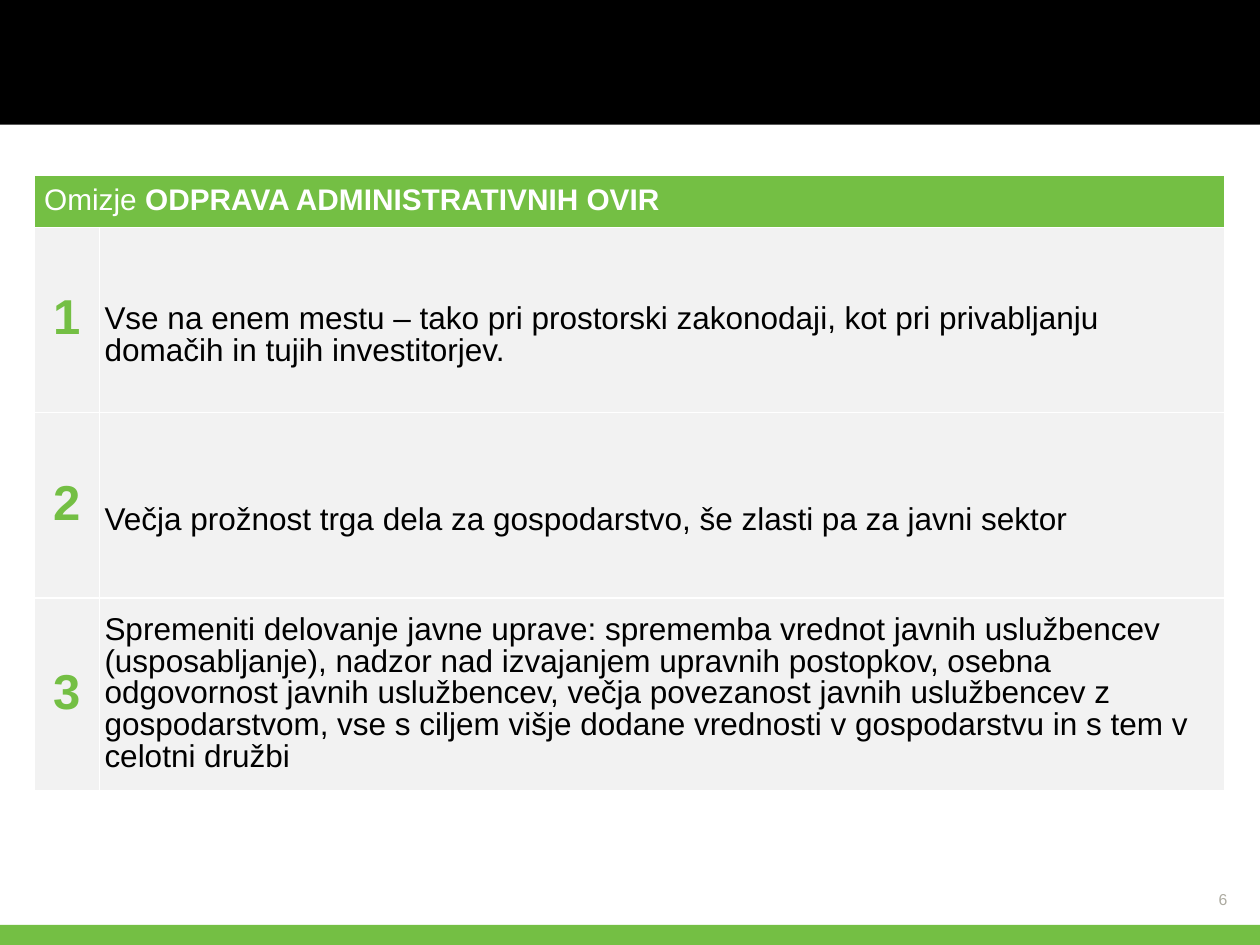
import pptx
import pptx.dml.color
import pptx.enum.shapes
import pptx.enum.text
import pptx.oxml
import pptx.oxml.ns
import pptx.util
from dataclasses import dataclass

Inches = pptx.util.Inches
Pt = pptx.util.Pt
ALIGN = pptx.enum.text.PP_ALIGN
ANCHOR = pptx.enum.text.MSO_ANCHOR


@dataclass(frozen=True)
class Theme:
    font: str = "Arial"
    green: str = "74BF44"
    black: str = "000000"
    white: str = "FFFFFF"
    panel: str = "F2F2F2"
    muted: str = "ADABA1"
    heading_size: int = 17
    number_size: int = 28
    body_size: int = 18
    page_size: int = 9


THEME = Theme()
TOPIC = ("Omizje ", "ODPRAVA ADMINISTRATIVNIH OVIR")
LINE_DROP = 0.25
PROPOSALS = [
    ("Vse na enem mestu – tako pri prostorski zakonodaji, kot pri privabljanju "
     "domačih in tujih investitorjev.", LINE_DROP),
    ("Večja prožnost trga dela za gospodarstvo, še zlasti pa za javni sektor", LINE_DROP),
    ("Spremeniti delovanje javne uprave: sprememba vrednot javnih uslužbencev "
     "(usposabljanje), nadzor nad izvajanjem upravnih postopkov, osebna odgovornost "
     "javnih uslužbencev, večja povezanost javnih uslužbencev z gospodarstvom, vse s "
     "ciljem višje dodane vrednosti v gospodarstvu in s tem v celotni družbi", 0),
]
COLUMN_WIDTHS = [0.52, 8.93]
ROW_HEIGHTS = [0.41, 1.47, 1.47, 1.53]


def rgb(colour):
    return pptx.dml.color.RGBColor.from_string(colour)


def apply_format(target, values):
    for name, value in values.items():
        setattr(target, name, value)


def set_margins(target, margin, top_extra=0):
    apply_format(target, {
        "margin_left": Inches(margin), "margin_right": Inches(margin),
        "margin_top": Inches(margin + top_extra), "margin_bottom": Inches(margin),
    })


def add_run(paragraph, text, size, colour, bold=False):
    run = paragraph.add_run()
    run.text = text
    apply_format(run.font, {"name": THEME.font, "size": Pt(size), "bold": bold})
    run.font.color.rgb = rgb(colour)


def add_band(slide, top, height, colour):
    band = slide.shapes.add_shape(
        pptx.enum.shapes.MSO_SHAPE.RECTANGLE, 0, Inches(top), Inches(10), Inches(height))
    band.shadow.inherit = False
    band.fill.solid()
    band.fill.fore_color.rgb = rgb(colour)
    band.line.fill.background()


def add_page_number(slide, number):
    page = slide.shapes.add_textbox(Inches(9.45), Inches(7.07), Inches(0.29), Inches(0.14))
    frame = page.text_frame
    set_margins(frame, 0)
    apply_format(frame, {"word_wrap": True, "vertical_anchor": ANCHOR.BOTTOM})
    paragraph = frame.paragraphs[0]
    paragraph.alignment = ALIGN.RIGHT
    add_run(paragraph, number, THEME.page_size, THEME.muted)


def add_borders(cell):
    properties = cell._tc.get_or_add_tcPr()
    for side in ("lnL", "lnR", "lnT", "lnB"):
        properties.append(pptx.oxml.parse_xml(
            f'<a:{side} {pptx.oxml.ns.nsdecls("a")} w="{Pt(1)}"><a:solidFill>'
            f'<a:srgbClr val="{THEME.white}"/></a:solidFill></a:{side}>'))


def format_cell(cell, fill, margin, alignment=ALIGN.LEFT, top_extra=0):
    add_borders(cell)
    cell.fill.solid()
    cell.fill.fore_color.rgb = rgb(fill)
    cell.vertical_anchor = ANCHOR.MIDDLE
    set_margins(cell, margin, top_extra)
    paragraph = cell.text_frame.paragraphs[0]
    apply_format(paragraph, {"alignment": alignment, "line_spacing": 0.9})
    return paragraph


def add_proposals(slide):
    table = slide.shapes.add_table(
        len(ROW_HEIGHTS), len(COLUMN_WIDTHS), Inches(0.27), Inches(1.39),
        Inches(sum(COLUMN_WIDTHS)), Inches(sum(ROW_HEIGHTS))).table
    apply_format(table, {"first_row": False, "horz_banding": False})
    for column, width in zip(table.columns, COLUMN_WIDTHS):
        column.width = Inches(width)
    for row, height in zip(table.rows, ROW_HEIGHTS):
        row.height = Inches(height)

    table.cell(0, 0).merge(table.cell(0, 1))
    heading = format_cell(table.cell(0, 0), THEME.green, 0.08)
    for text, bold in zip(TOPIC, (False, True)):
        add_run(heading, text, THEME.heading_size, THEME.white, bold)

    for index, (proposal, drop) in enumerate(PROPOSALS, start=1):
        number = format_cell(table.cell(index, 0), THEME.panel, 0.04, ALIGN.CENTER)
        add_run(number, str(index), THEME.number_size, THEME.green, True)
        body = format_cell(table.cell(index, 1), THEME.panel, 0.04, top_extra=drop)
        add_run(body, proposal, THEME.body_size, THEME.black)


def main():
    deck = pptx.Presentation()
    apply_format(deck, {"slide_width": Inches(10), "slide_height": Inches(7.5)})
    slide = deck.slides.add_slide(deck.slide_layouts[6])
    add_band(slide, 7.34, 0.16, THEME.green)
    add_band(slide, 0, 0.99, THEME.black)
    add_page_number(slide, "6")
    add_proposals(slide)
    deck.save("out.pptx")


if __name__ == "__main__":
    main()
